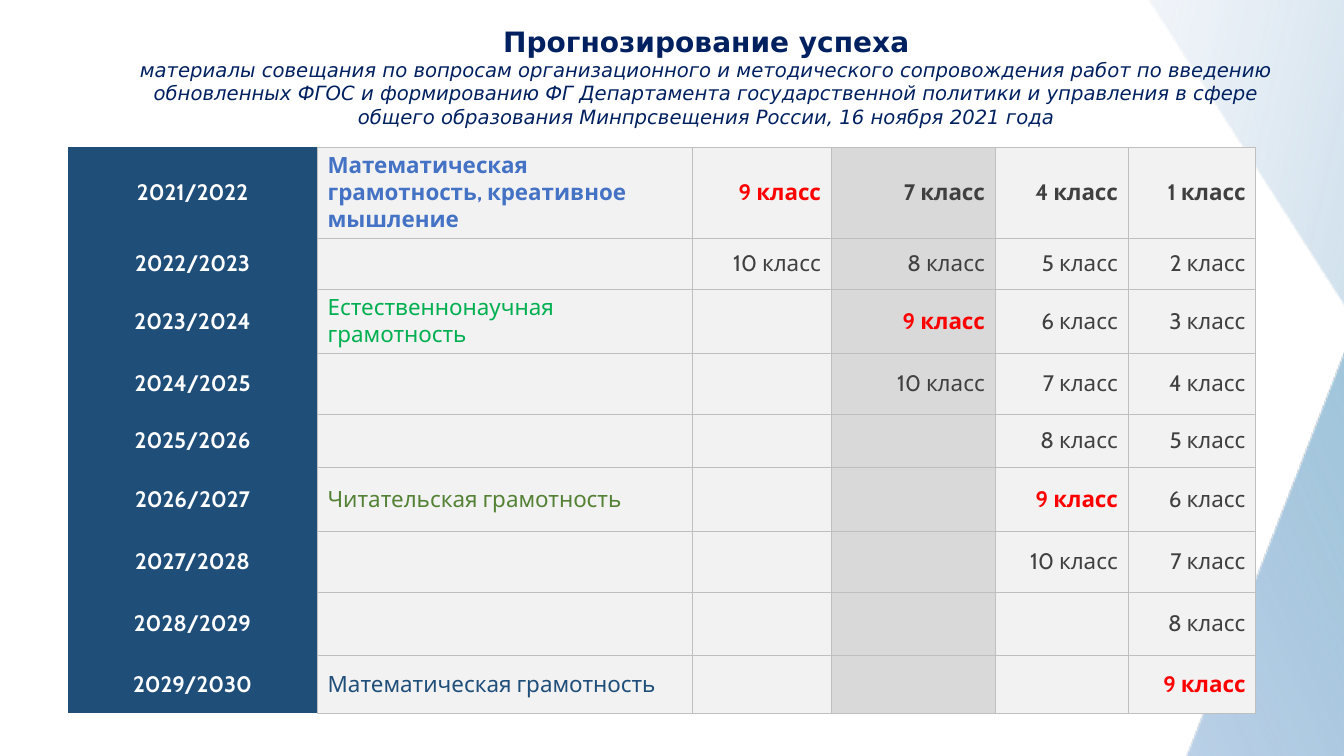
from dataclasses import dataclass

from lxml.etree import SubElement
from pptx import Presentation
from pptx.dml.color import RGBColor
from pptx.enum.shapes import MSO_SHAPE
from pptx.enum.text import MSO_ANCHOR, MSO_AUTO_SIZE, PP_ALIGN
from pptx.oxml import parse_xml
from pptx.oxml.ns import nsdecls, qn
from pptx.slide import Slide
from pptx.table import _Cell
from pptx.text.text import _Paragraph
from pptx.util import Emu, Inches, Pt

WIDTH, HEIGHT = Inches(13.33), Inches(7.5)
COLORS = {
    "navy": "002060", "year": "1F4E79", "white": "FFFFFF", "border": "BFBFBF",
    "pale": "F2F2F2", "gray": "D9D9D9", "text": "404040", "red": "FF0000",
    "blue": "4472C4", "green": "00B050", "olive": "548235",
    "band start": "80A2D7", "band middle": "A1C6DB", "band end": "E3E8F3",
}


@dataclass(frozen=True)
class Box:
    """Place and size in percent of the slide."""
    left: float
    top: float
    width: float
    height: float

    def lengths(self) -> tuple[Emu, Emu, Emu, Emu]:
        return (across(self.left), down(self.top),
                across(self.width), down(self.height))


@dataclass(frozen=True)
class Band:
    box: Box
    rotation: float
    flipped: bool


@dataclass(frozen=True)
class Topic:
    text: str
    color: str


TITLE_BOX = Box(8.33, 2.53, 88.45, 15.2)
TABLE_LEFT, TABLE_TOP = 5.03, 19.47
COLUMNS = (18.6, 27.9, 10.3, 12.2, 9.9, 9.5)
ROWS = (9.7, 6.7, 6.9, 8, 7.1, 8.4, 8.1, 8.3, 7.7)
BANDS = (
    Band(Box(82.15, -7.07, 70, 66.53), 57.4, True),
    Band(Box(66.69, 47.47, 91.97, 66.53), 291.3, False),
)
BAND_STOPS = (("band start", 0, 20), ("band middle", 46, 100), ("band end", 100, 20))

FIRST_YEAR = 2021
FIRST_GRADES = (9, 7, 4, 1)
TESTED_GRADE, LAST_GRADE = 9, 10
SHADED_COLUMN = 3
TOPICS = {
    0: Topic("Математическая грамотность, креативное мышление", "blue"),
    2: Topic("Естественнонаучная грамотность", "green"),
    5: Topic("Читательская грамотность", "olive"),
    8: Topic("Математическая грамотность", "year"),
}
TITLE = "Прогнозирование успеха"
SUBTITLE = (
    "материалы совещания по вопросам организационного и методического "
    "сопровождения работ по введению обновленных ФГОС и формированию ФГ "
    "Департамента государственной политики и управления в сфере общего "
    "образования Минпрсвещения России, 16 ноября 2021 года"
)


def across(percent: float) -> Emu:
    return Emu(round(WIDTH * percent / 100))


def down(percent: float) -> Emu:
    return Emu(round(HEIGHT * percent / 100))


def write(paragraph: _Paragraph, text: str, color: str,
          alignment: PP_ALIGN, **font_format) -> None:
    paragraph.alignment = alignment
    run = paragraph.add_run()
    run.text = text
    run.font.color.rgb = RGBColor.from_string(COLORS[color])
    for name, value in font_format.items():
        setattr(run.font, name, value)


def add_band(slide: Slide, band: Band) -> None:
    shape = slide.shapes.add_shape(MSO_SHAPE.RECTANGLE, *band.box.lengths())
    shape.rotation = band.rotation
    shape.shadow.inherit = False
    shape.line.fill.background()
    properties = shape._element.spPr
    if band.flipped:
        properties.find(qn("a:xfrm")).set("flipH", "1")
    stops = "".join(
        f'<a:gs pos="{position * 1000}"><a:srgbClr val="{COLORS[color]}">'
        f'<a:alpha val="{opacity * 1000}"/></a:srgbClr></a:gs>'
        for color, position, opacity in BAND_STOPS
    )
    properties.find(qn("a:prstGeom")).addnext(parse_xml(
        f'<a:gradFill {nsdecls("a")} rotWithShape="1"><a:gsLst>{stops}</a:gsLst>'
        '<a:lin ang="2700000" scaled="0"/></a:gradFill>'
    ))


def set_borders(cell: _Cell, visible: tuple[str, ...]) -> None:
    properties = cell._tc.get_or_add_tcPr()
    for index, side in enumerate(("L", "R", "T", "B")):
        line = SubElement(properties, qn(f"a:ln{side}"), w=str(Pt(0.25)))
        if side in visible:
            fill = SubElement(line, qn("a:solidFill"))
            SubElement(fill, qn("a:srgbClr"), val=COLORS["border"])
        else:
            SubElement(line, qn("a:noFill"))
        properties.insert(index, line)


def fill_cell(cell: _Cell, row: int, column: int) -> None:
    paragraph = cell.text_frame.paragraphs[0]
    paragraph.font.size = Pt(16)
    cell.vertical_anchor = MSO_ANCHOR.MIDDLE
    background = {0: "year", SHADED_COLUMN: "gray"}.get(column, "pale")
    cell.fill.solid()
    cell.fill.fore_color.rgb = RGBColor.from_string(COLORS[background])
    set_borders(cell, ("R",) if column == 0 else ("L", "R", "T", "B"))

    font_format = {"name": "Cabin", "size": Pt(16), "bold": row == 0}
    if column == 0:
        year = FIRST_YEAR + row
        font_format["bold"] = True
        write(paragraph, f"{year}/{year + 1}", "white", PP_ALIGN.CENTER, **font_format)
    elif column == 1:
        if row in TOPICS:
            topic = TOPICS[row]
            write(paragraph, topic.text, topic.color, PP_ALIGN.LEFT, **font_format)
    else:
        grade = FIRST_GRADES[column - 2] + row
        if grade <= LAST_GRADE:
            tested = grade == TESTED_GRADE
            font_format["bold"] = tested or row == 0
            write(paragraph, f"{grade} класс", "red" if tested else "text",
                  PP_ALIGN.RIGHT, **font_format)


def add_forecast_table(slide: Slide) -> None:
    box = Box(TABLE_LEFT, TABLE_TOP, sum(COLUMNS), sum(ROWS))
    table = slide.shapes.add_table(len(ROWS), len(COLUMNS), *box.lengths()).table
    table.first_row = table.horz_banding = False
    for column, percent in zip(table.columns, COLUMNS):
        column.width = across(percent)
    for row_index, percent in enumerate(ROWS):
        table.rows[row_index].height = down(percent)
        for column_index in range(len(COLUMNS)):
            fill_cell(table.cell(row_index, column_index), row_index, column_index)


def set_title(slide: Slide) -> None:
    """Format the title placeholder and bring it to the front."""
    title = slide.shapes.title
    title.left, title.top, title.width, title.height = TITLE_BOX.lengths()
    frame = title.text_frame
    frame_format = {"word_wrap": True, "vertical_anchor": MSO_ANCHOR.TOP,
                    "auto_size": MSO_AUTO_SIZE.SHAPE_TO_FIT_TEXT}
    for name, value in frame_format.items():
        setattr(frame, name, value)
    write(frame.paragraphs[0], TITLE, "navy", PP_ALIGN.CENTER,
          name="DejaVu Sans", size=Pt(20), bold=True)
    write(frame.add_paragraph(), SUBTITLE, "navy", PP_ALIGN.CENTER,
          name="DejaVu Sans", size=Pt(14), bold=False, italic=True)
    slide.shapes._spTree.append(title._element)


def main() -> None:
    presentation = Presentation()
    presentation.slide_width, presentation.slide_height = WIDTH, HEIGHT
    slide = presentation.slides.add_slide(presentation.slide_layouts[5])
    for band in BANDS:
        add_band(slide, band)
    add_forecast_table(slide)
    set_title(slide)
    presentation.save("out.pptx")


if __name__ == "__main__":
    main()
